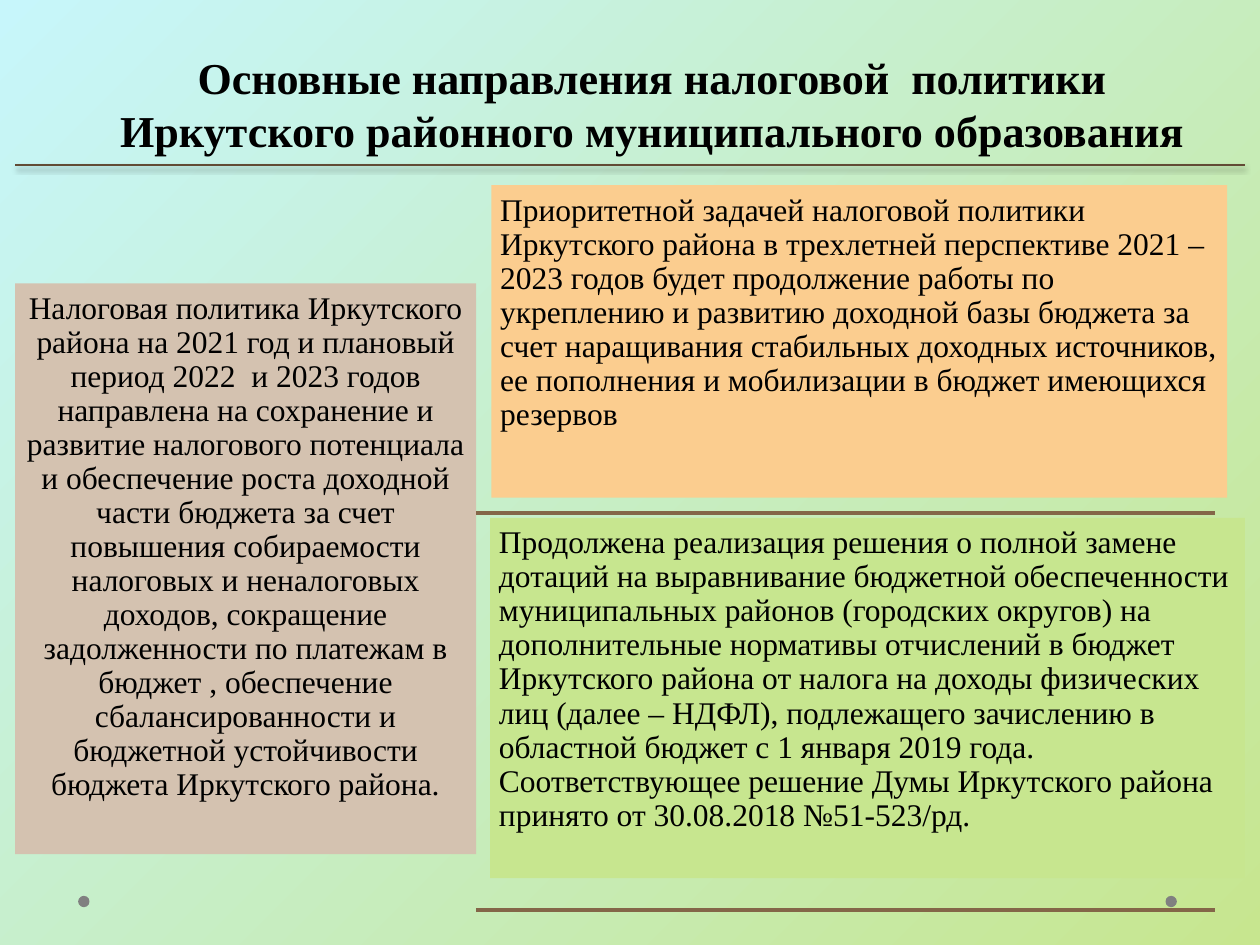
"""Build the slide on the main directions of the district's tax policy."""
from lxml import etree
from pptx import Presentation
from pptx.dml.color import RGBColor
from pptx.enum.shapes import MSO_CONNECTOR, MSO_SHAPE
from pptx.enum.text import MSO_ANCHOR, MSO_AUTO_SIZE, PP_ALIGN
from pptx.oxml.ns import qn
from pptx.util import Pt

PX = 9144
FONT = "Times New Roman"
LEFT, CENTER = PP_ALIGN.LEFT, PP_ALIGN.CENTER
TOP, BOTTOM = MSO_ANCHOR.TOP, MSO_ANCHOR.BOTTOM
NO_AUTOFIT = MSO_AUTO_SIZE.NONE
ELLIPSE, RECTANGLE = MSO_SHAPE.OVAL, MSO_SHAPE.RECTANGLE
STRAIGHT = MSO_CONNECTOR.STRAIGHT


def color(value):
    return RGBColor.from_string(value)


def write(shape, text, frame_format, paragraph_format, font_format):
    frame = shape.text_frame
    frame.text = text
    paragraph = frame.paragraphs[0]
    font = paragraph.runs[0].font
    font.color.rgb = color("000000")
    for target, values in (
        (frame, frame_format),
        (paragraph, paragraph_format),
        (font, font_format),
    ):
        for name, value in values.items():
            setattr(target, name, value)


presentation = Presentation()
presentation.slide_width = 1000 * PX
presentation.slide_height = 750 * PX
slide = presentation.slides.add_slide(presentation.slide_layouts[5])

background = slide.background.fill
background.gradient()
background.gradient_angle = 315
for stop, position, value in zip(
    background.gradient_stops, (0, 1), ("C7F6FB", "C7E68F")
):
    stop.position = position
    stop.color.rgb = color(value)

for left in (925, 62):
    dot = slide.shapes.add_shape(ELLIPSE, left * PX, 711 * PX, 9 * PX, 9 * PX)
    dot.shadow.inherit = False
    dot.fill.solid()
    dot.fill.fore_color.rgb = color("808080")
    dot.line.fill.background()

title = slide.shapes.title
title.left, title.top, title.width, title.height = 75 * PX, 21 * PX, 885 * PX, 108 * PX
write(
    title,
    "Основные направления налоговой  политики Иркутского районного муниципального образования",
    {"vertical_anchor": BOTTOM, "auto_size": NO_AUTOFIT, "word_wrap": True},
    {"alignment": CENTER},
    {"name": FONT, "size": Pt(25.2), "bold": True},
)

panels = [
    (12, 225, 366, 453, "D4C2B0", CENTER,
     "Налоговая политика Иркутского района на 2021 год и плановый период 2022  и 2023 годов "
     "направлена на сохранение и развитие налогового потенциала и обеспечение роста доходной "
     "части бюджета за счет повышения собираемости налоговых и неналоговых доходов, сокращение "
     "задолженности по платежам в бюджет , обеспечение сбалансированности и бюджетной "
     "устойчивости бюджета Иркутского района."),
    (390, 147, 584, 248, "FBCD8F", LEFT,
     "Приоритетной задачей налоговой политики Иркутского района в трехлетней перспективе "
     "2021 – 2023 годов будет продолжение работы по укреплению и развитию доходной базы "
     "бюджета за счет наращивания стабильных доходных источников, ее пополнения и мобилизации "
     "в бюджет имеющихся резервов"),
    (389, 411, 599, 286, "C7E68F", LEFT,
     "Продолжена реализация решения о полной замене дотаций на выравнивание бюджетной "
     "обеспеченности муниципальных районов (городских округов) на дополнительные нормативы "
     "отчислений в бюджет Иркутского района от налога на доходы физических лиц (далее – НДФЛ), "
     "подлежащего зачислению в областной бюджет с 1 января 2019 года. Соответствующее решение "
     "Думы Иркутского района принято от 30.08.2018 №51-523/рд."),
]
panel_frame = {"vertical_anchor": TOP, "auto_size": NO_AUTOFIT, "word_wrap": True}
for side in ("left", "top", "right", "bottom"):
    panel_frame[f"margin_{side}"] = 7 * PX
for left, top, width, height, fill, alignment, text in panels:
    panel = slide.shapes.add_shape(
        RECTANGLE, left * PX, top * PX, width * PX, height * PX
    )
    panel.shadow.inherit = False
    panel.fill.solid()
    panel.fill.fore_color.rgb = color(fill)
    panel.line.fill.background()
    write(
        panel,
        text,
        panel_frame,
        {"alignment": alignment, "line_spacing": 0.9},
        {"name": FONT, "size": Pt(18)},
    )

rules = [
    (12, 988, 131, "624B35", 0.75, True),
    (378, 964, 407, "846648", 2.25, False),
    (378, 964, 722, "846648", 2.25, False),
]
for start, end, y, value, weight, has_shadow in rules:
    rule = slide.shapes.add_connector(STRAIGHT, start * PX, y * PX, end * PX, y * PX)
    rule.line.color.rgb = color(value)
    rule.line.width = Pt(weight)
    effects = etree.SubElement(rule._element.spPr, qn("a:effectLst"))
    if has_shadow:
        shadow = etree.SubElement(
            effects, qn("a:outerShdw"),
            blurRad=str(Pt(3.1)), dist=str(Pt(1.8)), dir="5400000", rotWithShape="0",
        )
        shadow_color = etree.SubElement(shadow, qn("a:srgbClr"), val="000000")
        etree.SubElement(shadow_color, qn("a:alpha"), val="35000")

presentation.save("out.pptx")
